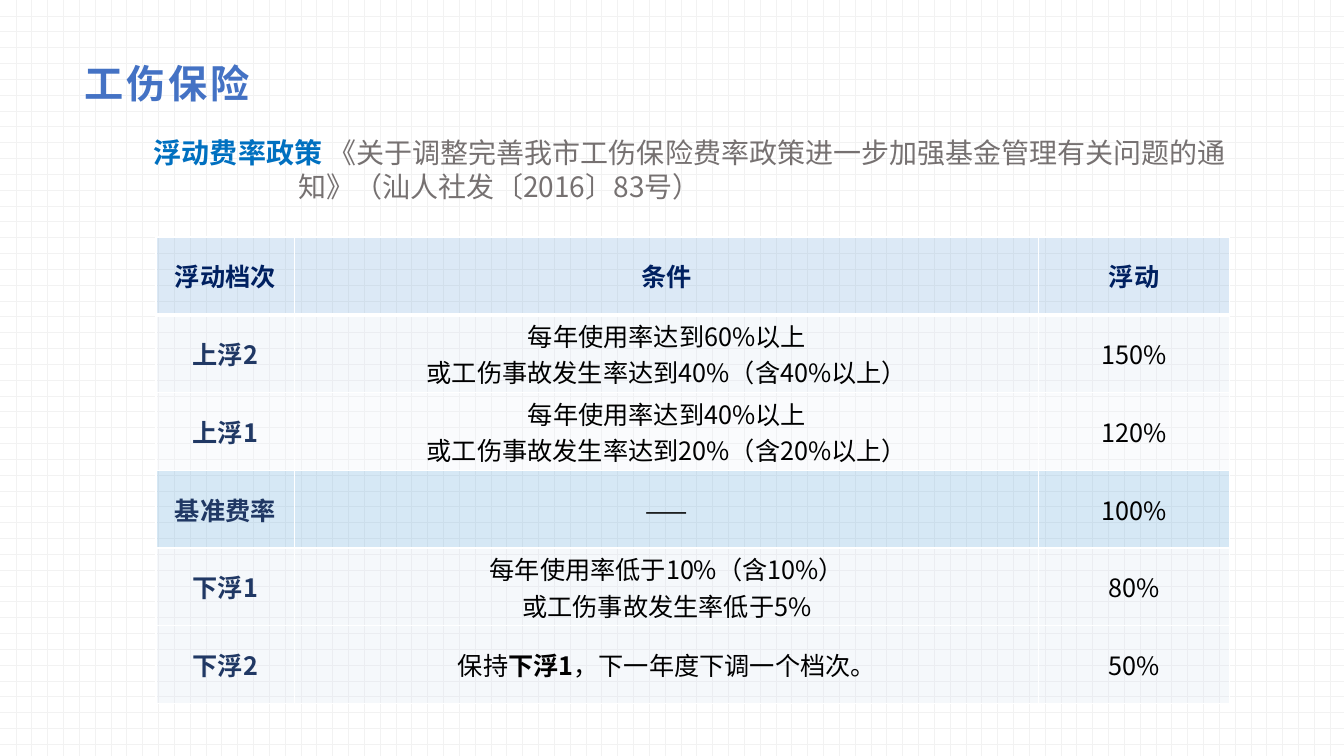
from lxml import etree
from pptx import Presentation
from pptx.dml.color import RGBColor
from pptx.enum.dml import MSO_PATTERN
from pptx.enum.text import MSO_ANCHOR, PP_ALIGN
from pptx.oxml.ns import qn
from pptx.util import Cm, Pt

MIDDLE = MSO_ANCHOR.MIDDLE
CENTER = PP_ALIGN.CENTER
DOT_GRID = MSO_PATTERN.DOTTED_GRID

COLORS = {
    "white": "FFFFFF", "grid": "F2F2F2", "title": "4472C4", "policy": "0070C0",
    "grey": "767171", "head_text": "002060", "level": "203864", "black": "000000",
    "head": "5B9BD5", "band": "D2DEEF", "pale": "EAEFF7", "base": "4095D2",
}
CJK = "Noto Sans CJK SC"
FILL_ALPHA = "21000"
COLUMNS = [3.5, 18.75, 4.8]
ROW_HEIGHT = 1.96

HEADINGS = ["浮动档次", "条件", "浮动"]
LEVELS = [
    ("上浮2", [[("每年使用率达到60%以上", False)],
             [("或工伤事故发生率达到40%（含40%以上）", False)]], "150%", "band"),
    ("上浮1", [[("每年使用率达到40%以上", False)],
             [("或工伤事故发生率达到20%（含20%以上）", False)]], "120%", "pale"),
    ("基准费率", [[("——", False)]], "100%", "base"),
    ("下浮1", [[("每年使用率低于10%（含10%）", False)],
             [("或工伤事故发生率低于5%", False)]], "80%", "band"),
    ("下浮2", [[("保持", False), ("下浮1", True),
              ("，下一年度下调一个档次。", False)]], "50%", "band"),
]


class SlideBuilder:
    """Holds the style and the current slide, and adds each kind of element."""

    def __init__(self, prs):
        self.s = prs.slides.add_slide(prs.slide_layouts[6])

    def color(self, name):
        return RGBColor.from_string(COLORS[name])

    def background(self):
        fill = self.s.background.fill
        fill.patterned()
        fill.pattern = DOT_GRID
        fill.fore_color.rgb = self.color("grid")
        fill.back_color.rgb = self.color("white")

    def run(self, p, text, size, color, bold=False, font=CJK):
        r = p.add_run()
        r.text = text
        r.font.size = Pt(size)
        r.font.bold = bold
        r.font.name = font
        r.font.color.rgb = self.color(color)
        rPr = r.font._element
        etree.SubElement(rPr, qn("a:ea")).set("typeface", CJK)
        return r

    def textbox(self, left, top, width, height):
        sp = self.s.shapes.add_textbox(Cm(left), Cm(top), Cm(width), Cm(height))
        tf = sp.text_frame
        tf.word_wrap = True
        return tf

    def title(self, text):
        tf = self.textbox(1.85, 1.19, 30.15, 1.8)
        tf.vertical_anchor = MIDDLE
        tf.margin_left = Cm(0.28)
        r = self.run(tf.paragraphs[0], text, 28, "title", True, "Arial")
        r.font._element.set("spc", "200")

    def policy(self, label, first, rest):
        tf = self.textbox(3.63, 3.3, 27.91, 1.96)
        p = tf.paragraphs[0]
        self.run(p, label, 20, "policy", True)
        self.run(p, first, 20, "grey")
        p2 = tf.add_paragraph()
        self.run(p2, rest, 20, "grey")
        p2._p.get_or_add_pPr().set("marL", str(Cm(3.65)))
        for line in tf.paragraphs:
            line.line_spacing = Pt(24)

    def border(self, tcPr, side, width):
        ln = etree.SubElement(tcPr, qn("a:ln" + side), w=str(Pt(width)))
        solid = etree.SubElement(ln, qn("a:solidFill"))
        etree.SubElement(solid, qn("a:srgbClr"), val=COLORS["white"])

    def cell(self, cell, lines, color, bold, fill, row):
        cell.vertical_anchor = MIDDLE
        cell.margin_top = cell.margin_bottom = 0
        tf = cell.text_frame
        for i, line in enumerate(lines):
            p = tf.add_paragraph() if i else tf.paragraphs[0]
            p.alignment = CENTER
            for text, strong in line:
                self.run(p, text, 18, color, bold or strong)
        tcPr = cell._tc.get_or_add_tcPr()
        for side in "LRTB":
            thick = (row, side) in ((0, "B"), (1, "T"))
            self.border(tcPr, side, 3 if thick else 1)
        cell.fill.solid()
        cell.fill.fore_color.rgb = self.color(fill)
        clr = tcPr.find(qn("a:solidFill")).find(qn("a:srgbClr"))
        etree.SubElement(clr, qn("a:alpha"), val=FILL_ALPHA)

    def table(self, left, top):
        rows = len(LEVELS) + 1
        frame = self.s.shapes.add_table(
            rows, len(COLUMNS), Cm(left), Cm(top),
            Cm(sum(COLUMNS)), Cm(ROW_HEIGHT * rows))
        table = frame.table
        table.horz_banding = False
        for column, width in zip(table.columns, COLUMNS):
            column.width = Cm(width)
        for row in table.rows:
            row.height = Cm(ROW_HEIGHT)
        for c, heading in enumerate(HEADINGS):
            self.cell(table.cell(0, c), [[(heading, True)]], "head_text", True, "head", 0)
        for n, (level, condition, rate, fill) in enumerate(LEVELS, 1):
            self.cell(table.cell(n, 0), [[(level, True)]], "level", True, fill, n)
            self.cell(table.cell(n, 1), condition, "black", False, fill, n)
            self.cell(table.cell(n, 2), [[(rate, False)]], "black", False, fill, n)


def main():
    prs = Presentation()
    prs.slide_width = Cm(33.87)
    prs.slide_height = Cm(19.05)
    slide = SlideBuilder(prs)
    slide.background()
    slide.title("工伤保险")
    slide.policy("浮动费率政策",
                 " 《关于调整完善我市工伤保险费率政策进一步加强基金管理有关问题的通",
                 "知》（汕人社发〔2016〕83号）")
    slide.table(3.93, 5.97)
    prs.save("out.pptx")


if __name__ == "__main__":
    main()
